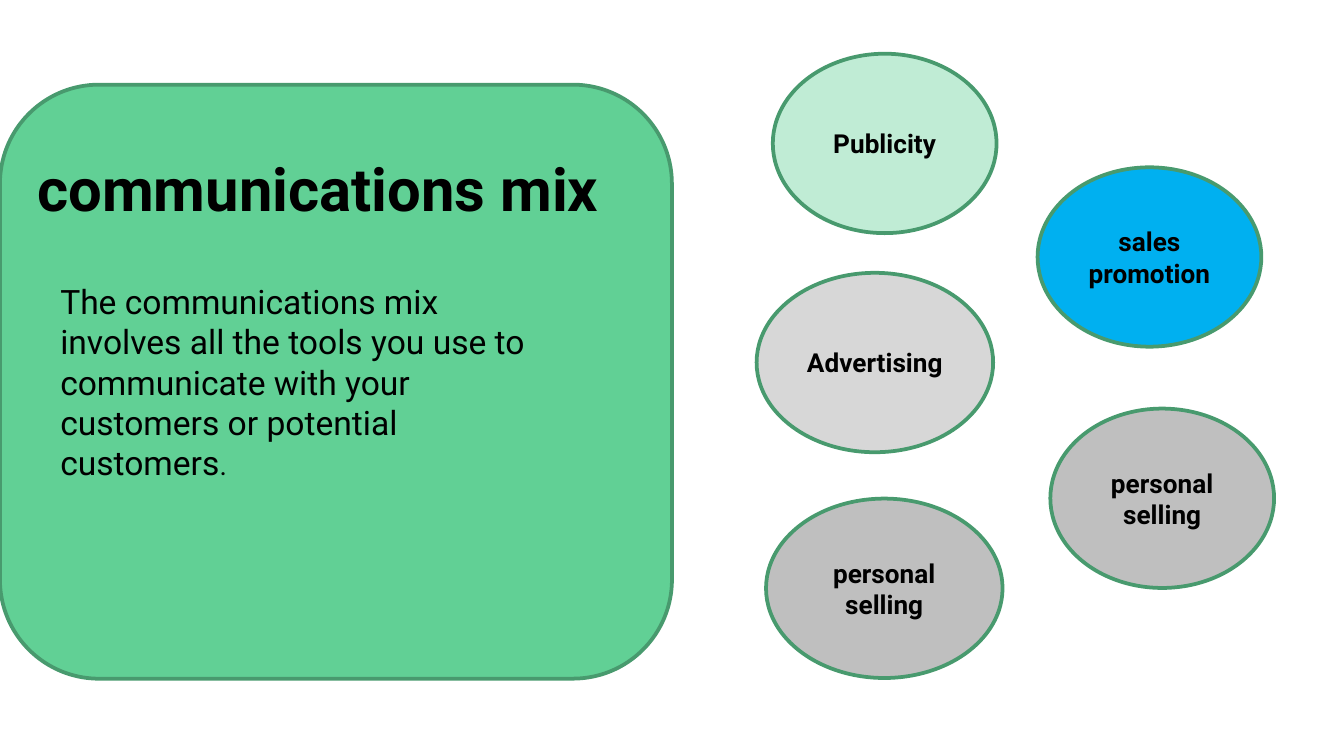
from collections import namedtuple

from pptx import Presentation
from pptx.dml.color import RGBColor
from pptx.enum.shapes import MSO_SHAPE
from pptx.enum.text import MSO_ANCHOR, PP_ALIGN
from pptx.util import Inches, Pt

COLORS = {
    "panel": "61D095",
    "outline": "489A6E",
    "ink": "000000",
    "mint": "C0ECD5",
    "silver": "D7D7D7",
    "sky": "00B0F0",
    "gray": "BFBFBF",
}
FONT = "Roboto"
SLIDE_WIDTH = Inches(10)
SLIDE_HEIGHT = SLIDE_WIDTH * 9 // 16
CELL = SLIDE_WIDTH // 100
BUBBLE_ROWS = 13.35
WIDE, NARROW = 17.6, 16.65
TOOLS = [
    ("Advertising", "silver", 0, 16.3, WIDE),
    ("Publicity", "mint", 1.2, 0, NARROW),
    ("sales promotion", "sky", 20.9, 8.45, NARROW),
    ("personal selling", "gray", 21.85, 26.4, NARROW),
    ("personal selling", "gray", 0.7, 33.1, WIDE),
]

Box = namedtuple("Box", "col row cols rows")


def inside(box, col, row, cols, rows):
    return Box(box.col + col, box.row + row, cols, rows)


def emu(box):
    return [round(cells * CELL) for cells in box]


def color(name):
    return RGBColor.from_string(COLORS[name])


def style_run(run, size, bold=False):
    run.font.name = FONT
    run.font.size = Pt(size)
    run.font.bold = bold
    run.font.color.rgb = color("ink")


def write(frame, words, size, bold=False, align=PP_ALIGN.LEFT):
    frame.text = words
    frame.word_wrap = True
    frame.vertical_anchor = MSO_ANCHOR.MIDDLE
    paragraph = frame.paragraphs[0]
    paragraph.alignment = align
    for run in paragraph.runs:
        style_run(run, size, bold)
    return paragraph


def add_outlined(slide, preset, box, fill):
    outlined = slide.shapes.add_shape(preset, *emu(box))
    outlined.shadow.inherit = False
    outlined.fill.solid()
    outlined.fill.fore_color.rgb = color(fill)
    outlined.line.color.rgb = color("outline")
    outlined.line.width = Pt(2)
    return outlined


def add_text(slide, box, words, size, side_inset, **style):
    frame = slide.shapes.add_textbox(*emu(box)).text_frame
    frame.margin_left = frame.margin_right = Inches(side_inset)
    frame.margin_top = frame.margin_bottom = Inches(0.1)
    return write(frame, words, size, **style)


def add_definition(slide, box):
    add_outlined(slide, MSO_SHAPE.ROUNDED_RECTANGLE, box, "panel")
    heading = add_text(slide, inside(box, 1.7, 4.8, 43.95, 4.9), "communications mix",
                       32, 0.05, bold=True, align=PP_ALIGN.CENTER)
    heading.line_spacing = 1.15
    definition = add_text(
        slide, inside(box, 3.5, 11.05, 39.5, 22.1),
        "The communications mix involves all the tools you use to "
        "communicate with your customers or potential customers", 18, 0.1)
    full_stop = definition.add_run()
    full_stop.text = "."
    style_run(full_stop, 15)


def add_tools(slide, box):
    for label, fill, col, row, cols in TOOLS:
        bubble = add_outlined(slide, MSO_SHAPE.OVAL,
                              inside(box, col, row, cols, BUBBLE_ROWS), fill)
        write(bubble.text_frame, label, 14, bold=True, align=PP_ALIGN.CENTER)


def main():
    deck = Presentation()
    deck.slide_width, deck.slide_height = SLIDE_WIDTH, SLIDE_HEIGHT
    slide = deck.slides.add_slide(deck.slide_layouts[6])
    add_definition(slide, Box(0, 6.3, 50, 44.2))
    add_tools(slide, Box(56.3, 4, 38.5, 46.45))
    deck.save("out.pptx")


if __name__ == "__main__":
    main()
